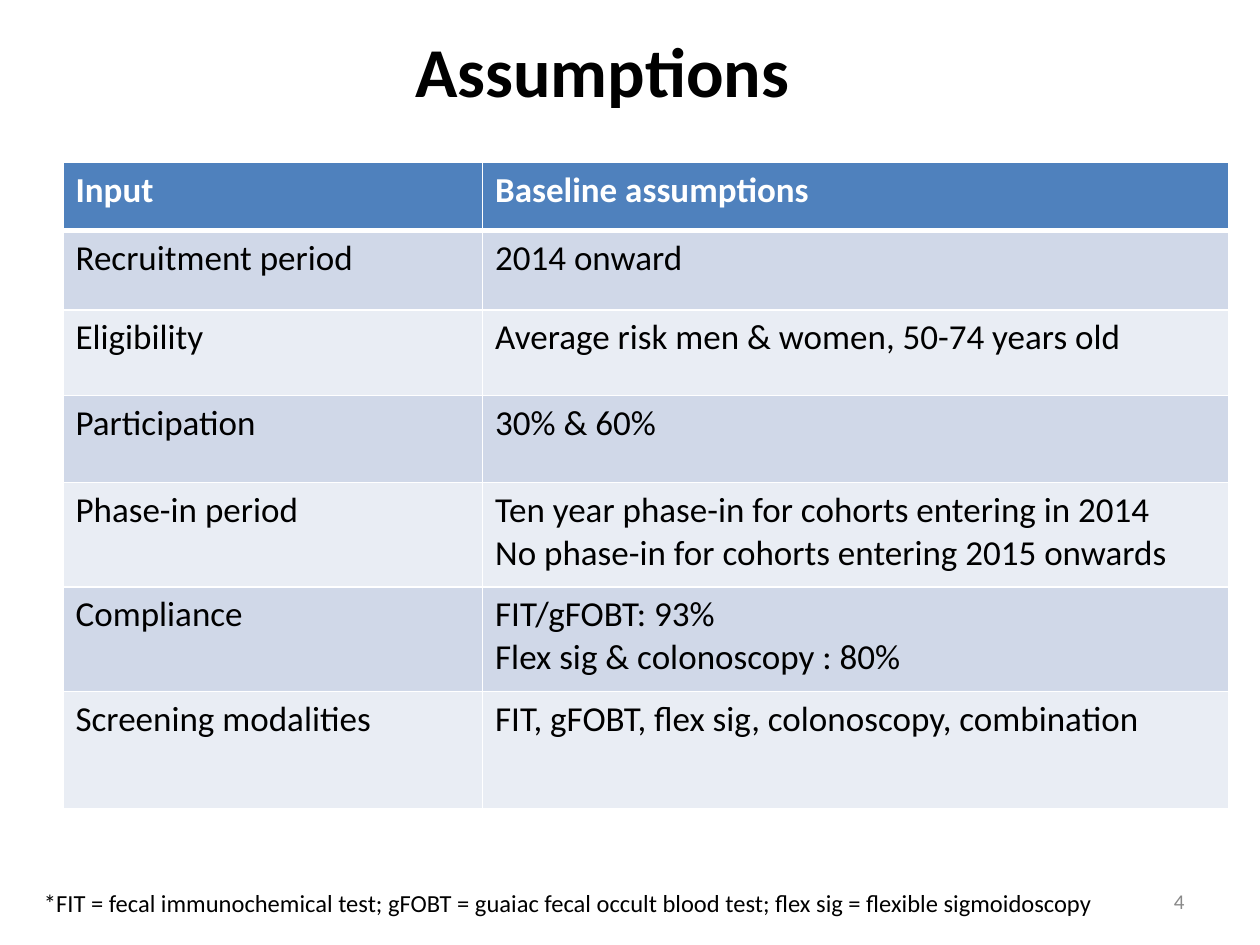
from lxml import etree
from pptx import Presentation
from pptx.dml.color import RGBColor
from pptx.enum.text import MSO_ANCHOR, PP_ALIGN
from pptx.oxml.ns import qn
from pptx.util import Inches, Pt

LEFT, CENTER, RIGHT = PP_ALIGN.LEFT, PP_ALIGN.CENTER, PP_ALIGN.RIGHT
TOP, MIDDLE = MSO_ANCHOR.TOP, MSO_ANCHOR.MIDDLE
BLACK = RGBColor(0x00, 0x00, 0x00)
WHITE = RGBColor(0xFF, 0xFF, 0xFF)
GREY = RGBColor(0x89, 0x89, 0x89)
BLUE = RGBColor(0x4F, 0x81, 0xBD)
BANDS = [RGBColor(0xE9, 0xED, 0xF4), RGBColor(0xD0, 0xD8, 0xE8)]
FONT = "Calibri"

# Content: row height, input, lines of the assumption
TITLE = "Assumptions"
ROWS = [
    (0.54, "Input", ["Baseline assumptions"]),
    (0.63, "Recruitment period", ["2014 onward"]),
    (0.68, "Eligibility", ["Average risk men & women, 50-74 years old"]),
    (0.69, "Participation", ["30% & 60%"]),
    (0.83, "Phase-in period", ["Ten year phase-in for cohorts entering in 2014",
                               "No phase-in for cohorts entering 2015 onwards"]),
    (0.83, "Compliance", ["FIT/gFOBT: 93%", "Flex sig & colonoscopy : 80%"]),
    (0.93, "Screening modalities",
     ["FIT, gFOBT, flex sig, colonoscopy, combination"]),
]
COLS = [3.33, 5.92]
NOTE = ("*FIT = fecal immunochemical test; gFOBT = guaiac fecal occult blood "
        "test; flex sig = flexible sigmoidoscopy")
PAGE = "4"


def write(frame, lines, size, color, bold=False, align=LEFT):
    for i, line in enumerate(lines):
        para = frame.add_paragraph() if i else frame.paragraphs[0]
        para.alignment = align
        run = para.add_run()
        run.text = line
        font = run.font
        font.name, font.size, font.bold = FONT, Pt(size), bold
        font.color.rgb = color


def place(shape, left, top, width, height):
    shape.left, shape.top = Inches(left), Inches(top)
    shape.width, shape.height = Inches(width), Inches(height)


def add_text(slide, box, text, size, color, align, anchor):
    frame = slide.shapes.add_textbox(*map(Inches, box)).text_frame
    frame.word_wrap = True
    frame.vertical_anchor = anchor
    write(frame, [text], size, color, align=align)


def add_edges(cell, widths):
    props = cell._tc.get_or_add_tcPr()
    for side, width in widths.items():
        line = etree.SubElement(props, qn("a:ln" + side), w=str(Pt(width)))
        fill = etree.SubElement(line, qn("a:solidFill"))
        etree.SubElement(fill, qn("a:srgbClr"), val=str(WHITE))


def add_table(slide):
    total = sum(row[0] for row in ROWS)
    table = slide.shapes.add_table(
        len(ROWS), len(COLS), Inches(0.5), Inches(1.29),
        Inches(sum(COLS)), Inches(total)).table
    for col, width in zip(table.columns, COLS):
        col.width = Inches(width)
    for r, (height, name, lines) in enumerate(ROWS):
        table.rows[r].height = Inches(height)
        head = r == 0
        for c, text in enumerate([[name], lines]):
            cell = table.cell(r, c)
            # The rule under the header is heavier than the grid
            add_edges(cell, {"L": 1, "R": 1, "T": 3 if r == 1 else 1,
                             "B": 3 if head else 1})
            cell.fill.solid()
            cell.fill.fore_color.rgb = BLUE if head else BANDS[r % 2]
            write(cell.text_frame, text, 20, WHITE if head else BLACK, head)


def main():
    deck = Presentation()
    deck.slide_width, deck.slide_height = Inches(10), Inches(7.5)
    slide = deck.slides.add_slide(deck.slide_layouts[5])

    # Table, page number and footnote
    add_table(slide)
    add_text(slide, (7.17, 6.95, 2.33, 0.4), PAGE, 12, GREY, RIGHT, MIDDLE)
    add_text(slide, (0.25, 7, 8.92, 0.34), NOTE, 14, BLACK, LEFT, TOP)

    # Title
    title = slide.shapes.title
    place(title, 0.28, 0.17, 9, 0.77)
    title.text_frame.vertical_anchor = MIDDLE
    write(title.text_frame, [TITLE], 40, BLACK, True, CENTER)

    deck.save("out.pptx")


if __name__ == "__main__":
    main()
